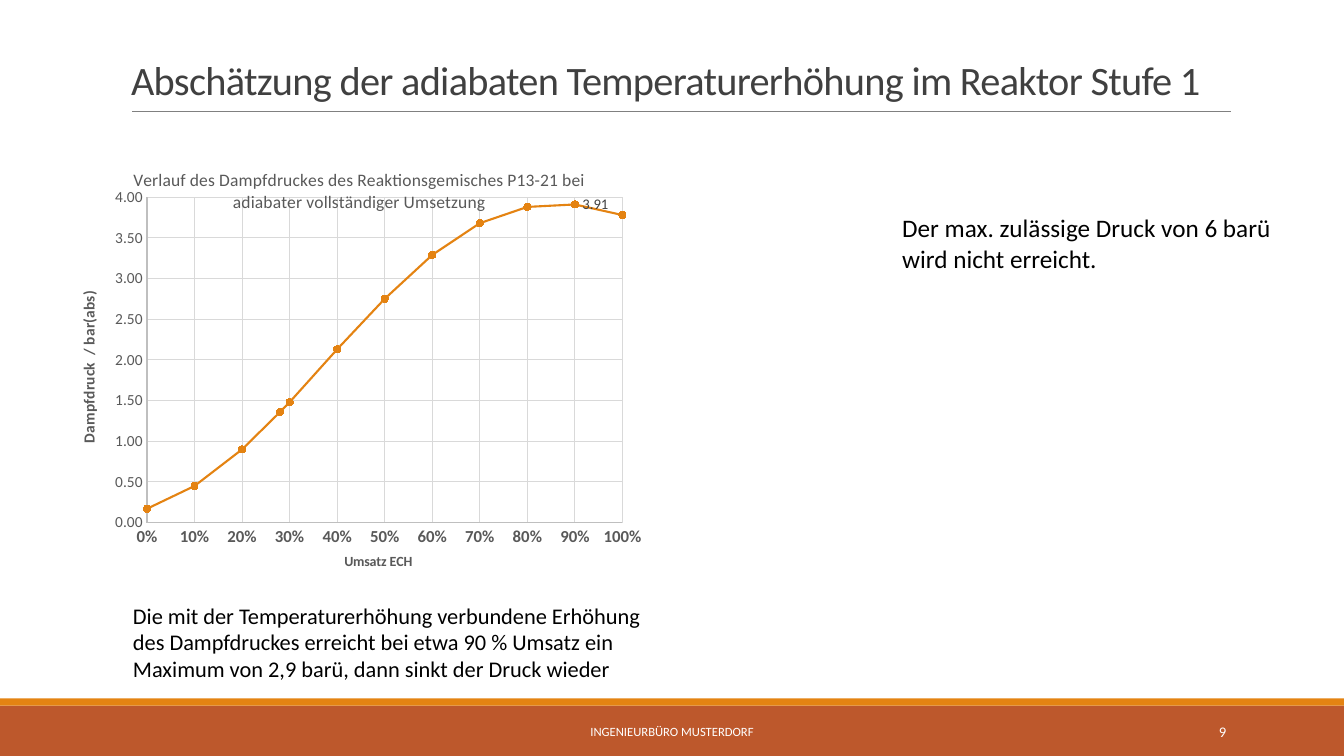
from pptx import Presentation
from pptx.chart.data import XyChartData
from pptx.dml.color import RGBColor
from pptx.enum.chart import XL_CHART_TYPE, XL_LABEL_POSITION, XL_MARKER_STYLE, XL_TICK_MARK
from pptx.enum.shapes import MSO_CONNECTOR, MSO_SHAPE
from pptx.enum.text import MSO_ANCHOR, PP_ALIGN
from pptx.oxml import parse_xml
from pptx.oxml.ns import nsdecls
from pptx.util import Inches, Pt

FONT = "Calibri"
WHITE = RGBColor(0xFF, 0xFF, 0xFF)
BLACK = RGBColor(0, 0, 0)
DARK = RGBColor(0x40, 0x40, 0x40)
GREY = RGBColor(0x59, 0x59, 0x59)
RULE = RGBColor(0x80, 0x80, 0x80)
AXIS = RGBColor(0xBF, 0xBF, 0xBF)
GRID = RGBColor(0xD9, 0xD9, 0xD9)
ORANGE = RGBColor(0xE4, 0x83, 0x12)
RUST = RGBColor(0xBD, 0x58, 0x2C)

POINTS = [(0, 0.17), (0.1, 0.45), (0.2, 0.9), (0.28, 1.36), (0.3, 1.48), (0.4, 2.13),
          (0.5, 2.75), (0.6, 3.29), (0.7, 3.68), (0.8, 3.88), (0.9, 3.91), (1, 3.78)]
PEAK = 10


def set_font(font, size, color, bold=False):
    font.name = FONT
    font.size = Pt(size)
    font.bold = bold
    font.color.rgb = color


def set_line(line, color, width):
    line.color.rgb = color
    line.width = Pt(width)


def add_text(slide, box, text, size, color=BLACK, align=PP_ALIGN.LEFT, anchor=MSO_ANCHOR.TOP):
    frame = slide.shapes.add_textbox(*map(Inches, box)).text_frame
    frame.word_wrap = True
    frame.vertical_anchor = anchor
    frame.text = text
    para = frame.paragraphs[0]
    para.alignment = align
    set_font(para.runs[0].font, size, color)


def add_bar(slide, box, color):
    bar = slide.shapes.add_shape(MSO_SHAPE.RECTANGLE, *map(Inches, box))
    bar.shadow.inherit = False
    bar.fill.solid()
    bar.fill.fore_color.rgb = color
    bar.line.fill.background()


def add_footer(slide, left, top, width, height):
    add_bar(slide, (left, top + 0.07, width, height - 0.07), RUST)
    add_bar(slide, (left, top, width, 0.07), ORANGE)
    add_text(slide, (left + 4.03, top + 0.13, 5.27, 0.4), "INGENIEURBÜRO MUSTERDORF",
             9, WHITE, PP_ALIGN.CENTER, MSO_ANCHOR.MIDDLE)
    add_text(slide, (left + 10.83, top + 0.13, 1.43, 0.4), "9",
             10.5, WHITE, PP_ALIGN.RIGHT, MSO_ANCHOR.MIDDLE)


def add_title(slide, left, top, width, height):
    title = slide.shapes.title
    title.left, title.top = Inches(left), Inches(top)
    title.width, title.height = Inches(width), Inches(height)
    frame = title.text_frame
    frame.text = "Abschätzung der adiabaten Temperaturerhöhung im Reaktor Stufe 1"
    frame.word_wrap = True
    frame.vertical_anchor = MSO_ANCHOR.BOTTOM
    para = frame.paragraphs[0]
    para.alignment = PP_ALIGN.LEFT
    para.line_spacing = 0.85
    font = para.runs[0].font
    set_font(font, 28.8, DARK)
    para.runs[0]._r.get_or_add_rPr().set("spc", "-50")
    # Rule below the title
    y = Inches(top + height + 0.02)
    rule = slide.shapes.add_connector(MSO_CONNECTOR.STRAIGHT, Inches(left + 0.11), y,
                                      Inches(left + width + 0.01), y)
    set_line(rule.line, RULE, 0.5)
    rule._element.spPr.append(parse_xml(f"<a:effectLst {nsdecls('a')}/>"))


def set_title(part, text, size, color, bold):
    part.has_title = True
    frame = (part.chart_title if hasattr(part, "chart_title") else part.axis_title).text_frame
    frame.text = text
    set_font(frame.paragraphs[0].runs[0].font, size, color, bold)


def set_axis(axis, text, top, step, form, sizes, bold):
    set_title(axis, text, sizes[0], GREY, True)
    axis.minimum_scale, axis.maximum_scale, axis.major_unit = 0, top, step
    axis.major_tick_mark = axis.minor_tick_mark = XL_TICK_MARK.NONE
    axis.tick_labels.number_format = form
    axis.tick_labels.number_format_is_linked = False
    set_font(axis.tick_labels.font, sizes[1], GREY, bold)
    set_line(axis.format.line, AXIS, 0.75)
    axis.has_major_gridlines = True
    set_line(axis.major_gridlines.format.line, GRID, 0.75)


def set_plot(chart, x, y, w, h):
    area = chart._chartSpace.chart.plotArea
    for old in area.findall("{*}layout"):
        area.remove(old)
    sizes = "".join(f'<c:{k} val="{v}"/>' for k, v in zip("xywh", (x, y, w, h)))
    area.insert(0, parse_xml(
        f'<c:layout {nsdecls("c")}><c:manualLayout><c:layoutTarget val="inner"/>'
        f'<c:xMode val="edge"/><c:yMode val="edge"/>{sizes}</c:manualLayout></c:layout>'))


def add_curve(slide, left, top, width, height):
    data = XyChartData()
    series = data.add_series("Dampfdruck")
    for x, y in POINTS:
        series.add_data_point(x, y)
    chart = slide.shapes.add_chart(XL_CHART_TYPE.XY_SCATTER_LINES, Inches(left), Inches(top),
                                   Inches(width), Inches(height), data).chart
    set_font(chart.font, 10.5, BLACK)
    chart.has_legend = False
    set_title(chart, "Verlauf des Dampfdruckes des Reaktionsgemisches P13-21 bei "
              "adiabater vollständiger Umsetzung", 12.5, GREY, False)
    chart.chart_title.include_in_layout = True
    set_plot(chart, 0.131, 0.111, 0.826, 0.769)
    set_axis(chart.category_axis, "Umsatz ECH", 1, 0.1, "0%", (10, 12), True)
    set_axis(chart.value_axis, "Dampfdruck  / bar(abs)", 4, 0.5, "0.00", (11, 11), False)

    # Pressure curve with its peak labelled
    plot = chart.plots[0]
    plot.vary_by_categories = False
    curve = plot.series[0]
    curve.smooth = False
    set_line(curve.format.line, ORANGE, 1.5)
    curve.marker.style = XL_MARKER_STYLE.CIRCLE
    curve.marker.size = 5
    curve.marker.format.fill.solid()
    curve.marker.format.fill.fore_color.rgb = ORANGE
    set_line(curve.marker.format.line, ORANGE, 0.75)
    label = curve.points[PEAK].data_label
    set_font(label.font, 10.5, DARK)
    label.position = XL_LABEL_POSITION.RIGHT


def main():
    deck = Presentation()
    deck.slide_width, deck.slide_height = Inches(13.33), Inches(7.5)
    slide = deck.slides.add_slide(deck.slide_layouts[5])
    add_footer(slide, 0, 6.93, 13.33, 0.57)
    add_title(slide, 1.2, 0.31, 11, 0.77)
    add_curve(slide, 0.71, 1.49, 5.71, 4.2)
    # Remarks
    add_text(slide, (1.22, 5.92, 5.45, 0.91),
             "Die mit der Temperaturerhöhung verbundene Erhöhung des Dampfdruckes erreicht bei "
             "etwa 90 % Umsatz ein Maximum von 2,9 barü, dann sinkt der Druck wieder", 16)
    add_text(slide, (8.85, 2.06, 3.96, 0.71),
             "Der max. zulässige Druck von 6 barü wird nicht erreicht.", 18)
    deck.save("out.pptx")


if __name__ == "__main__":
    main()
